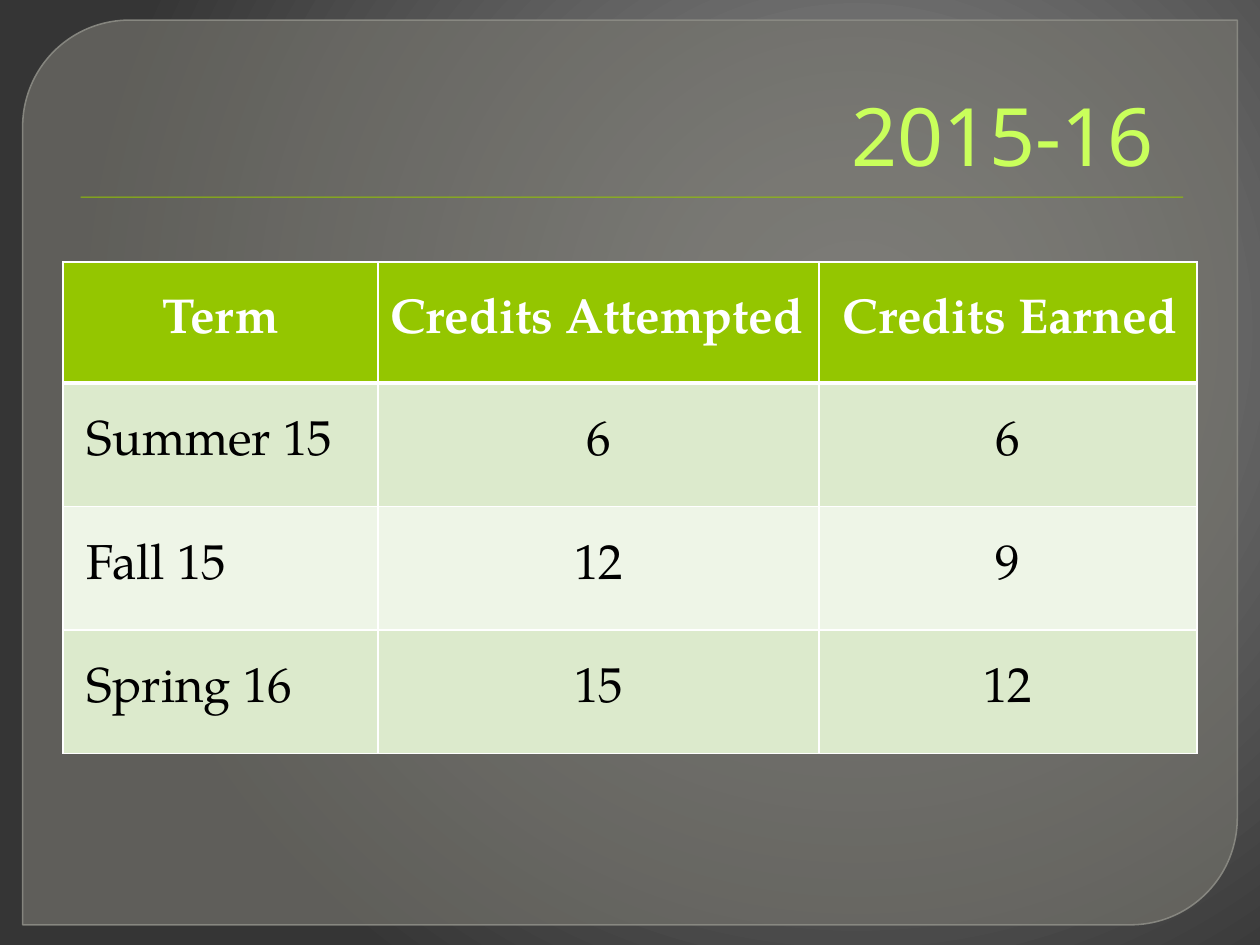
import dataclasses

import lxml.etree
import pptx
import pptx.dml.color
import pptx.enum.shapes
import pptx.enum.text
import pptx.oxml
import pptx.oxml.ns
import pptx.util

Inches = pptx.util.Inches
Pt = pptx.util.Pt
Align = pptx.enum.text.PP_ALIGN
Anchor = pptx.enum.text.MSO_ANCHOR
Shape = pptx.enum.shapes.MSO_SHAPE
qn = pptx.oxml.ns.qn
NS = pptx.oxml.ns.nsdecls("a")


@dataclasses.dataclass
class Style:
    font: str
    size: float
    color: str
    bold: bool = False
    align: Align = Align.LEFT


@dataclasses.dataclass
class Row:
    texts: tuple[str, str, str]
    fill: str
    height: float


BODY = "TeX Gyre Pagella"
WIDTHS = (2.5, 3.5, 3)
ROWS = (
    Row(("Term", "Credits Attempted", "Credits Earned"), "94C600", 0.96),
    Row(("Summer 15", "6", "6"), "DCEACC", 0.98),
    Row(("Fall 15", "12", "9"), "EEF5E7", 0.98),
    Row(("Spring 16", "15", "12"), "DCEACC", 0.98),
)


def rgb(code: str) -> pptx.dml.color.RGBColor:
    return pptx.dml.color.RGBColor.from_string(code)


def fade(fill, alpha: int) -> None:
    """Set the opacity, in percent, of a solid fill."""
    color = fill.find(".//" + qn("a:srgbClr"))
    lxml.etree.SubElement(color, qn("a:alpha"), val=str(alpha * 1000))


def write(frame, text: str, style: Style) -> None:
    frame.text = text
    para = frame.paragraphs[0]
    para.alignment = style.align
    font = para.runs[0].font
    font.name, font.size, font.bold = style.font, Pt(style.size), style.bold
    font.color.rgb = rgb(style.color)


def paint(slide) -> None:
    """Give the slide a radial grey background."""
    slide.background.fill.gradient()
    grad = slide.element.find(".//" + qn("a:gradFill"))
    stops = "".join(
        f'<a:gs pos="{pos * 1000}"><a:srgbClr val="{code}"/></a:gs>'
        for pos, code in ((0, "8C8C8C"), (20, "7F7F7F"), (100, "353535"))
    )
    new = pptx.oxml.parse_xml(
        f'<a:gradFill {NS} rotWithShape="1"><a:gsLst>{stops}</a:gsLst>'
        '<a:path path="circle"><a:fillToRect l="68000" t="35000" '
        'r="32000" b="65000"/></a:path></a:gradFill>'
    )
    grad.getparent().replace(grad, new)


def block(slide, kind: Shape, box: tuple, color: str):
    shape = slide.shapes.add_shape(kind, *map(Inches, box))
    shape.shadow.inherit = False
    shape.fill.solid()
    shape.fill.fore_color.rgb = rgb(color)
    shape.line.fill.background()
    return shape


def panel(slide) -> None:
    shape = block(slide, Shape.ROUND_2_DIAG_RECTANGLE,
                  (0.18, 0.16, 9.64, 7.18), "76756E")
    shape.adjustments[0], shape.adjustments[1] = 0.118, 0
    fade(shape.element.spPr.find(qn("a:solidFill")), 65)
    shape.line.color.rgb = rgb("8D8D86")
    shape.line.width = Pt(0.87)
    fade(shape.element.spPr.find(qn("a:ln")), 88)


def title(slide, text: str) -> None:
    frame = slide.shapes.add_textbox(
        *map(Inches, (0.25, 0.25, 9, 1.25))).text_frame
    frame.word_wrap = True
    frame.vertical_anchor = Anchor.BOTTOM
    write(frame, text, Style("Noto Sans", 46, "C9FF5B", align=Align.RIGHT))


def edge(cell, top: float, base: float) -> None:
    """Draw white borders, with widths in points."""
    sides = (("L", 1), ("R", 1), ("T", top), ("B", base))
    for spot, (side, width) in enumerate(sides):
        line = pptx.oxml.parse_xml(
            f'<a:ln{side} {NS} w="{Pt(width)}"><a:solidFill>'
            f'<a:srgbClr val="FFFFFF"/></a:solidFill></a:ln{side}>'
        )
        cell._tc.get_or_add_tcPr().insert(spot, line)


def grid(slide) -> None:
    high = sum(row.height for row in ROWS)
    table = slide.shapes.add_table(
        len(ROWS), len(WIDTHS), Inches(0.5), Inches(2.08),
        Inches(sum(WIDTHS)), Inches(high)).table
    for col, width in zip(table.columns, WIDTHS):
        col.width = Inches(width)
    for r, row in enumerate(ROWS):
        table.rows[r].height = Inches(row.height)
        head = r == 0
        for c, text in enumerate(row.texts):
            cell = table.cell(r, c)
            mid = head == (c == 0) and not (head and c)
            mid = c == 0 if head else c > 0
            style = Style(BODY, 28, "FFFFFF" if head else "000000", head,
                          Align.CENTER if mid else Align.LEFT)
            write(cell.text_frame, text, style)
            cell.vertical_anchor = Anchor.MIDDLE
            if not mid and c != 1:
                cell.margin_left = Inches(0.19)
            cell.fill.solid()
            cell.fill.fore_color.rgb = rgb(row.fill)
            edge(cell, 3 if r == 1 else 1, 3 if head else 1)


def main() -> None:
    deck = pptx.Presentation()
    deck.slide_width, deck.slide_height = Inches(10), Inches(7.5)
    slide = deck.slides.add_slide(deck.slide_layouts[6])
    paint(slide)
    panel(slide)
    block(slide, Shape.RECTANGLE, (0.64, 1.56, 8.75, 0.01), "94C600")
    title(slide, "2015-16")
    grid(slide)
    deck.save("out.pptx")


if __name__ == "__main__":
    main()
